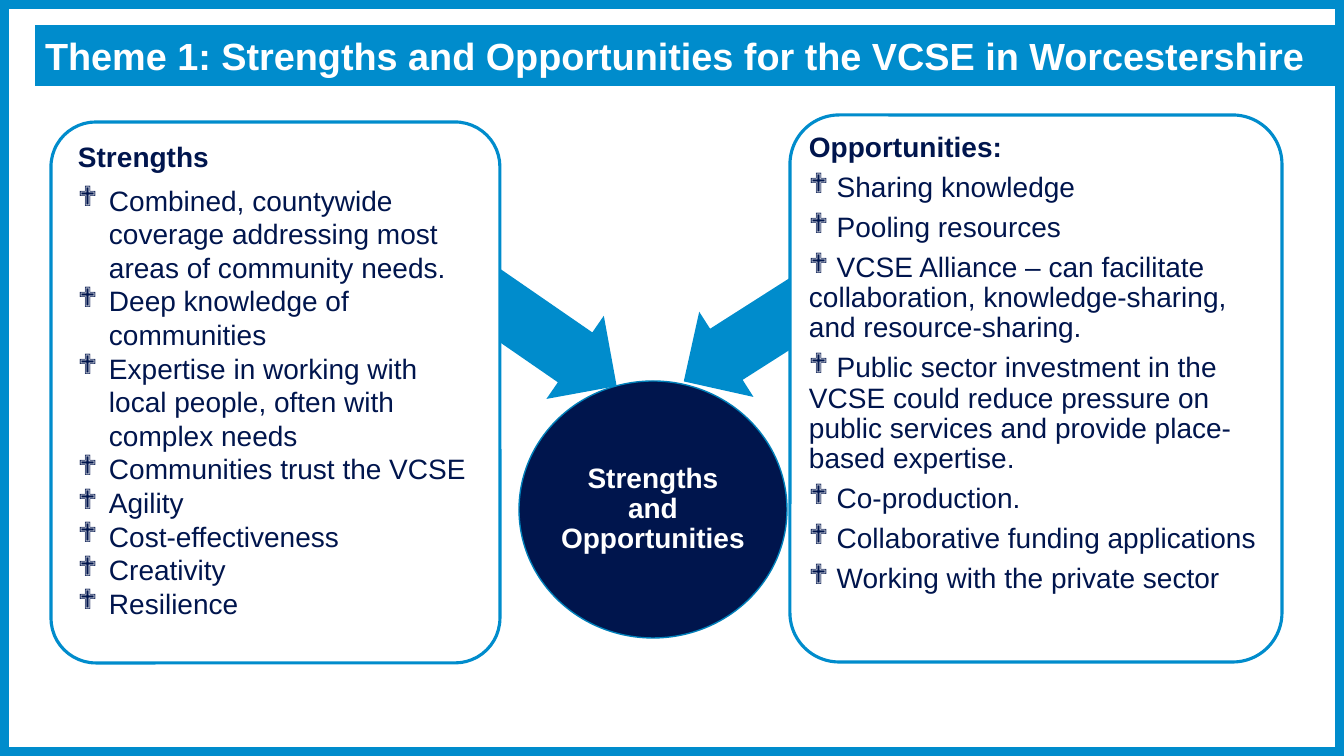
from lxml import etree
from pptx import Presentation
from pptx import util as u
from pptx.dml.color import RGBColor
from pptx.enum import shapes, text
from pptx.oxml.ns import qn

PX = 914400 / 100.8
W, H = 1344, 756
SHAPE = shapes.MSO_SHAPE
COLORS = {"blue": "008CCC", "rim": "007FB9", "navy": "00154D", "white": "FFFFFF"}

STRENGTHS = [
    "Combined, countywide coverage addressing most areas of community needs.",
    "Deep knowledge of communities",
    "Expertise in working with local people, often with complex needs",
    "Communities trust the VCSE",
    "Agility",
    "Cost-effectiveness",
    "Creativity",
    "Resilience",
]
OPPORTUNITIES = [
    " Sharing knowledge",
    " Pooling resources",
    " VCSE Alliance – can facilitate collaboration, knowledge-sharing, and resource-sharing.",
    " Public sector investment in the VCSE could reduce pressure on public services "
    "and provide place-based expertise.",
    " Co-production.",
    " Collaborative funding applications",
    " Working with the private sector",
]
SPACED = {"line_spacing": 0.9, "space_after": u.Pt(7)}
CENTRED = {"alignment": text.PP_ALIGN.CENTER, **SPACED}


def px(n):
    """Turn pixels into EMU."""
    return u.Emu(round(n * PX))


def rgb(name):
    """Look up a named colour."""
    return RGBColor.from_string(COLORS[name])


def apply(obj, values):
    """Set attributes from a dict."""
    for name, value in values.items():
        setattr(obj, name, value)


def add_box(s, kind, box, fill=None, line=None, width=1):
    """Draw a preset shape with the given fill and line."""
    sp = s.shapes.add_shape(kind, *map(px, box))
    sp.shadow.inherit = False
    if fill:
        sp.fill.solid()
        sp.fill.fore_color.rgb = rgb(fill)
    else:
        sp.fill.background()
    if line:
        sp.line.color.rgb = rgb(line)
        sp.line.width = u.Pt(width)
    else:
        sp.line.fill.background()
    return sp


def set_frame(tf, inset, anchor):
    """Give a text frame wrapping, equal insets and an anchor."""
    sides = ("left", "top", "right", "bottom")
    apply(tf, {"word_wrap": True, "vertical_anchor": anchor,
               **{f"margin_{side}": px(inset) for side in sides}})


def write(p, words, color, size=20, bold=False, fmt=None, bullet=None):
    """Fill a paragraph, with a diamond bullet if indents are given."""
    apply(p, fmt or {})
    if bullet:
        pPr = p._p.get_or_add_pPr()
        margin, indent = bullet
        pPr.set("marL", str(px(margin)))
        pPr.set("indent", str(px(indent)))
        etree.SubElement(pPr, qn("a:buFont")).set("typeface", "Wingdings")
        etree.SubElement(pPr, qn("a:buChar")).set("char", "❖")
    r = p.add_run()
    r.text = words
    apply(r.font, {"name": "Arial", "size": u.Pt(size), "bold": bold})
    r.font.color.rgb = rgb(color)


def add_title(s, box, words):
    """Draw the title bar."""
    tf = add_box(s, SHAPE.RECTANGLE, box, "blue").text_frame
    set_frame(tf, 10, text.MSO_ANCHOR.MIDDLE)
    write(tf.paragraphs[0], words, "white", 27, True,
          {"alignment": text.PP_ALIGN.LEFT})


def add_hub(s, box, words):
    """Draw the central circle with its label."""
    tf = add_box(s, SHAPE.OVAL, box, "navy", "rim").text_frame
    set_frame(tf, 1, text.MSO_ANCHOR.MIDDLE)
    write(tf.paragraphs[0], words, "white", bold=True, fmt=CENTRED)


def add_arrow(s, box, angle):
    """Draw a block arrow turned towards the hub."""
    sp = add_box(s, SHAPE.LEFT_ARROW, box, "blue")
    sp.adjustments[0], sp.adjustments[1] = 0.6, 0.5
    sp.rotation = angle


def add_card(s, box, pad, inset, heading, items, fmt, bullet):
    """Draw a rounded card holding a heading and a bulleted list."""
    sp = add_box(s, SHAPE.ROUNDED_RECTANGLE, box, "white", "blue", 2.25)
    sp.adjustments[0] = 0.1
    x, y, w, h = box
    dx, dy = pad
    area = (x + dx, y + dy, w - 2 * dx, h - 2 * dy)
    tf = s.shapes.add_textbox(*map(px, area)).text_frame
    set_frame(tf, inset, text.MSO_ANCHOR.TOP)
    write(tf.paragraphs[0], heading, "navy", bold=True, fmt=SPACED)
    for item in items:
        write(tf.add_paragraph(), item, "navy", fmt=fmt, bullet=bullet)


def main():
    """Build and save the slide."""
    prs = Presentation()
    prs.slide_width, prs.slide_height = px(W), px(H)
    s = prs.slides.add_slide(prs.slide_layouts[6])
    add_box(s, SHAPE.RECTANGLE, (0, 0, W, H), line="blue", width=12.25)
    add_title(s, (35, 25, W - 35, 61),
              "Theme 1: Strengths and Opportunities for the VCSE in Worcestershire")
    add_hub(s, (519, 381, 268, 257), "Strengths and Opportunities")
    add_arrow(s, (448, 283, 185, 101), 214.6)
    add_arrow(s, (664, 263, 253, 101), 327.5)
    add_card(s, (51, 122, 449, 541), (17, 11), 10, "Strengths", STRENGTHS,
             {}, (31, -31))
    add_card(s, (790, 115, 492, 547), (15, 14), 4, "Opportunities:", OPPORTUNITIES,
             SPACED, (0, -25))
    prs.save("out.pptx")


if __name__ == "__main__":
    main()
